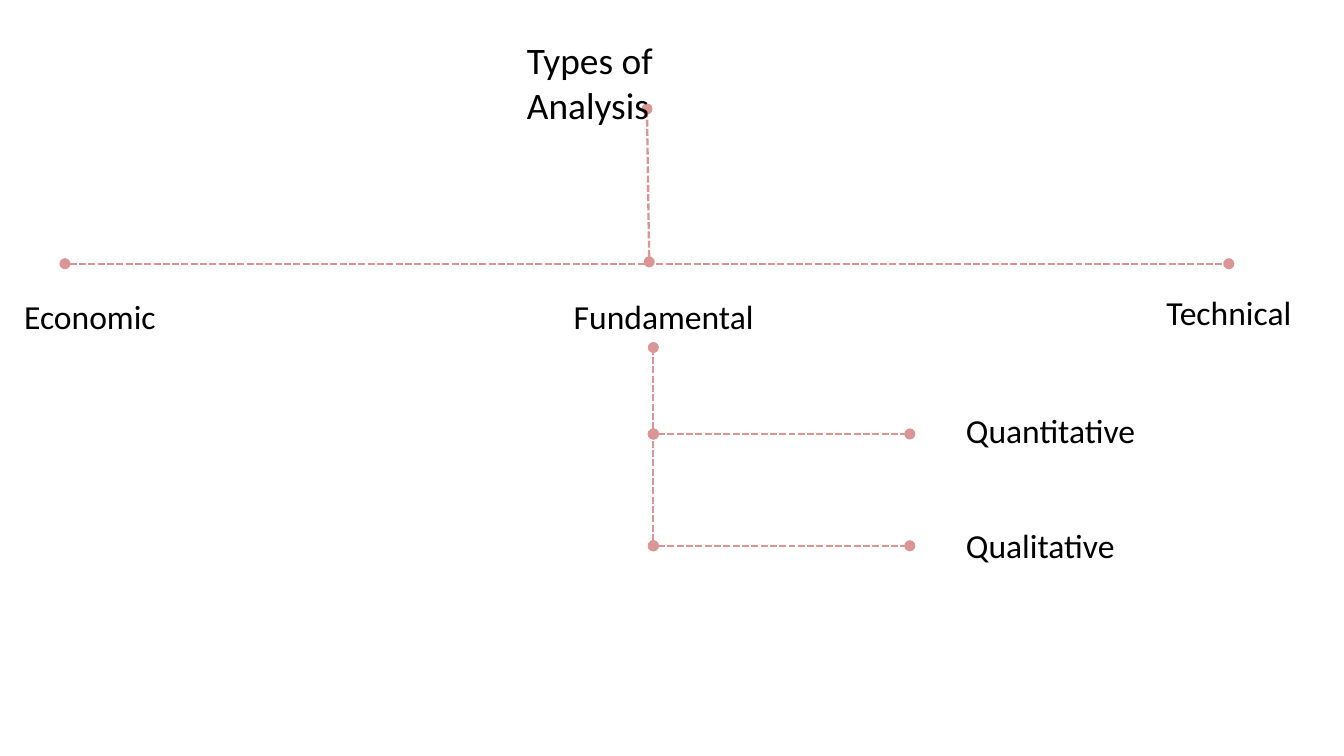
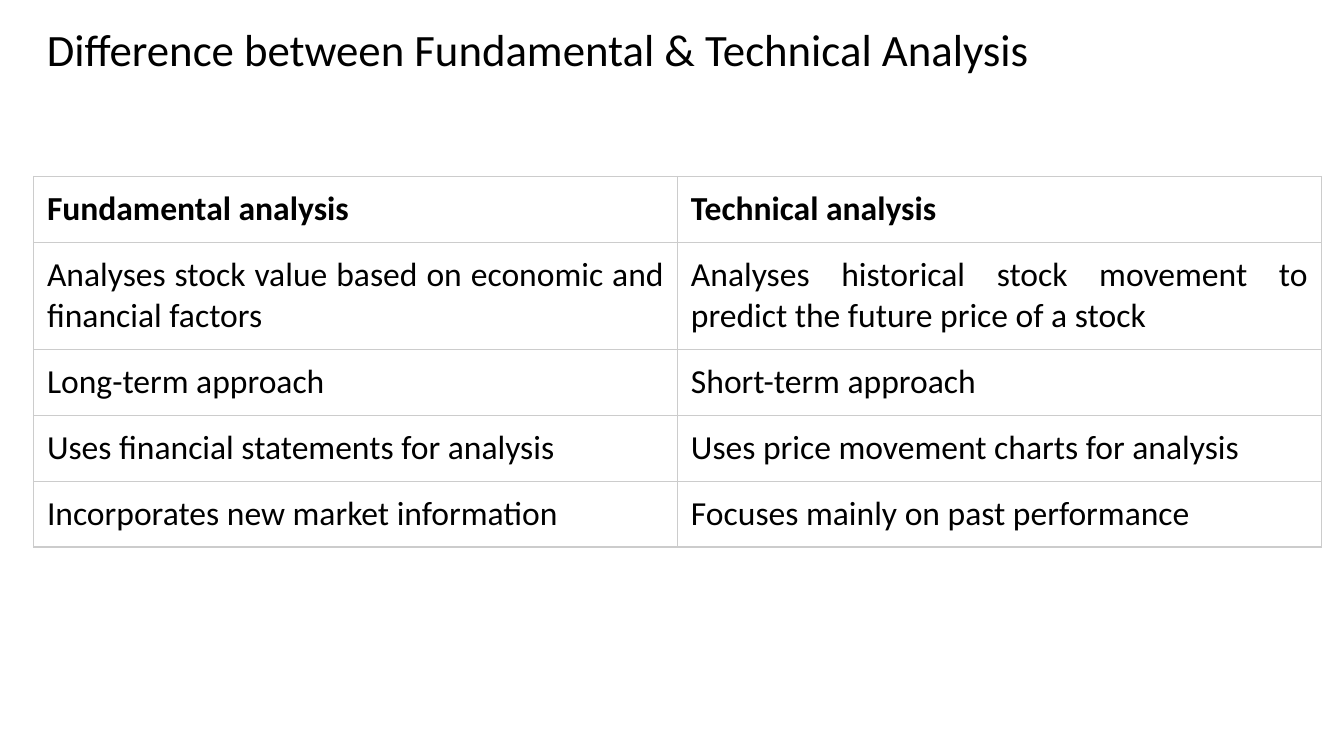
"""Build two slides: a tree of analysis types and a comparison table."""
from lxml import etree
from pptx import Presentation
from pptx import util as u
from pptx.dml.color import RGBColor
from pptx.enum import dml, shapes, text
from pptx.oxml import ns

COLORS = {"text": "000000", "branch": "D99694", "border": "CCCCCC", "cell": "FFFFFF"}
FONT = "Calibri"
SLIDE_SIZE = (720, 405)
LABEL_HEIGHT = 28.8
BODY_SIZE = 18

COMPARISON = [
    ("Fundamental analysis", "Technical analysis"),
    ("Analyses stock value based on economic and financial factors",
     "Analyses historical stock movement to predict the future price of a stock"),
    ("Long-term approach", "Short-term approach"),
    ("Uses financial statements for analysis", "Uses price movement charts for analysis"),
    ("Incorporates new market information", "Focuses mainly on past performance"),
]


def color(name):
    """Return the named colour."""
    return RGBColor.from_string(COLORS[name])


def apply_format(target, values):
    """Set every attribute in a dict of format values."""
    for name, value in values.items():
        setattr(target, name, value)


def add_xml(parent, tag, **attributes):
    """Append a drawing element and return it."""
    return etree.SubElement(parent, ns.qn(tag), attributes)


def write(frame, wording, size=BODY_SIZE, bold=False):
    """Write one paragraph into a text frame and return it."""
    paragraph = frame.paragraphs[0]
    run = paragraph.add_run()
    run.text = wording
    apply_format(run.font, {"name": FONT, "size": u.Pt(size), "bold": bold})
    run.font.color.rgb = color("text")
    return paragraph


def add_label(slide, wording, box, size=BODY_SIZE, wrap=True, anchor=text.MSO_ANCHOR.TOP):
    """Add a text box at left, top, width, height."""
    frame = slide.shapes.add_textbox(*map(u.Pt, box)).text_frame
    apply_format(frame, {"word_wrap": wrap, "vertical_anchor": anchor})
    write(frame, wording, size)


def add_branch(slide, start, end):
    """Draw a dashed branch with a dot at both ends."""
    branch = slide.shapes.add_connector(
        shapes.MSO_CONNECTOR.STRAIGHT, *map(u.Pt, (*start, *end)))
    apply_format(branch.line, {"width": u.Pt(1.25), "dash_style": dml.MSO_LINE.SQUARE_DOT})
    branch.line.color.rgb = color("branch")
    outline = branch.line._get_or_add_ln()
    for tag in ("a:headEnd", "a:tailEnd"):
        add_xml(outline, tag, type="oval")
    add_xml(branch._element.spPr, "a:effectLst")


def add_main_types(slide, left, top):
    """Place the root, its stem and the three main types."""
    bar = top + 124.7
    add_branch(slide, (left + 29, bar), (left + 652.5, bar))
    add_branch(slide, (left + 342, bar - 1), (left + 340.8, top + 41.8))
    add_label(slide, "Types of Analysis", (left + 269.4, top, 150.5, 31.5), 20)
    for wording, across, down, width in (
            ("Economic", 0, 138.4, 85), ("Fundamental", 294.5, 138.4, 110.9),
            ("Technical", 612, 136.2, 81.4)):
        add_label(slide, wording, (left + across, top + down, width, LABEL_HEIGHT), wrap=False)


def add_subtypes(slide, left, top):
    """Place the stem below a type and its two subtypes."""
    previous = top
    for wording, down, label_down, width in (
            ("Quantitative", 46.3, 29.8, 161.3), ("Qualitative", 106.2, 91.7, 131.8)):
        node = top + down
        add_branch(slide, (left, node), (left, previous))
        add_branch(slide, (left, node), (left + 137.4, node))
        add_label(slide, wording, (left + 160.4, top + label_down, width, LABEL_HEIGHT))
        previous = node


def format_cell(cell, wording, bold):
    """Fill, outline and write one table cell."""
    properties = cell._tc.get_or_add_tcPr()
    for tag in ("a:lnL", "a:lnR", "a:lnT", "a:lnB"):
        border = add_xml(properties, tag, w=str(u.Pt(0.75)))
        add_xml(add_xml(border, "a:solidFill"), "a:srgbClr", val=COLORS["border"])
    cell.fill.solid()
    cell.fill.fore_color.rgb = color("cell")
    apply_format(cell, {"margin_left": u.Pt(7.2), "margin_right": u.Pt(7.2),
                        "margin_top": u.Pt(6.6), "margin_bottom": u.Pt(6.6)})
    write(cell.text_frame, wording, bold=bold).alignment = text.PP_ALIGN.JUSTIFY


def add_comparison(slide, left, top, width):
    """Place the comparison table with two equal columns."""
    heights = (35.3, 57.3, 35.3, 35.3, 35.3)
    table = slide.shapes.add_table(
        len(COMPARISON), 2, *map(u.Pt, (left, top, width, sum(heights)))).table
    apply_format(table, {"first_row": False, "horz_banding": False})
    for row_number, (wordings, height) in enumerate(zip(COMPARISON, heights)):
        table.rows[row_number].height = u.Pt(height)
        for column_number, wording in enumerate(wordings):
            format_cell(table.cell(row_number, column_number), wording, row_number == 0)


def build_tree_slide(slide):
    """Build the tree of analysis types."""
    add_main_types(slide, 5.8, 16.6)
    add_subtypes(slide, 350, 186.2)


def build_comparison_slide(slide):
    """Build the titled comparison."""
    add_label(slide, "Difference between Fundamental & Technical Analysis",
              (18, 8, 594, 36), 24, anchor=text.MSO_ANCHOR.MIDDLE)
    add_comparison(slide, 18, 94.6, 690)


def main():
    """Build and save the presentation."""
    presentation = Presentation()
    width, height = map(u.Pt, SLIDE_SIZE)
    apply_format(presentation, {"slide_width": width, "slide_height": height})
    for build in (build_tree_slide, build_comparison_slide):
        build(presentation.slides.add_slide(presentation.slide_layouts[6]))
    presentation.save("out.pptx")


if __name__ == "__main__":
    main()
